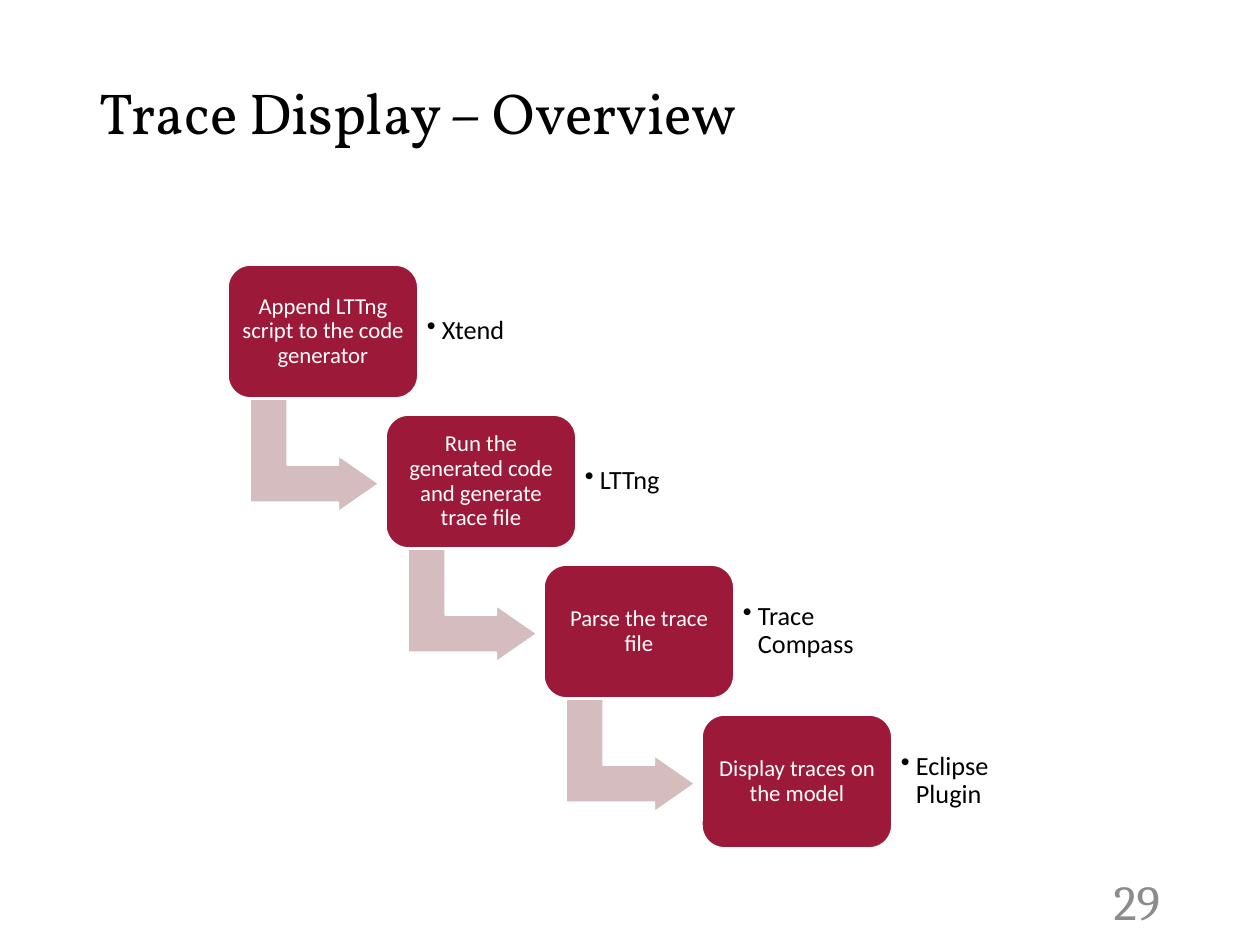
import pptx
import pptx.dml.color
import pptx.enum.shapes
import pptx.enum.text
import pptx.util
from lxml import etree

RGBColor = pptx.dml.color.RGBColor
MSO_SHAPE = pptx.enum.shapes.MSO_SHAPE
PP_ALIGN = pptx.enum.text.PP_ALIGN

CRIMSON = RGBColor(0x9D, 0x19, 0x39)
ROSE = RGBColor(0xD5, 0xBD, 0xBF)
WHITE = RGBColor(0xFF, 0xFF, 0xFF)
BLACK = RGBColor(0x00, 0x00, 0x00)
GRAY = RGBColor(0x8C, 0x8C, 0x8C)

EMU_PER_PX = 914400 / 126

TITLE = {"font": "Vollkorn", "size": 33, "color": BLACK, "align": PP_ALIGN.LEFT, "spacing": 0.9, "inset": (13, 6)}
NUMBER = {"font": "Cambria", "size": 28, "color": GRAY, "align": PP_ALIGN.RIGHT, "spacing": 1.0, "inset": (13, 6)}
STEP = {"font": "Calibri", "size": 13, "color": WHITE, "align": PP_ALIGN.CENTER, "spacing": 0.9, "inset": (6, 6)}
TOOL = {"font": "Calibri", "size": 15, "color": BLACK, "align": PP_ALIGN.LEFT, "spacing": 0.9, "inset": (8, 8),
        "bullet": True}

STEPS = [
    ("Append LTTng script to the code generator", "Xtend"),
    ("Run the generated code and generate trace file", "LTTng"),
    ("Parse the trace file", "Trace Compass"),
    ("Display traces on the model", "Eclipse Plugin"),
]
STEP_RIGHT, STEP_DOWN = 158, 150


def px(*lengths):
    return [pptx.util.Emu(round(length * EMU_PER_PX)) for length in lengths]


def write(shape, text, style):
    """Put one styled paragraph, bulleted if the style says so, into a shape."""
    frame = shape.text_frame
    side, top = px(*style["inset"])
    settings = {"word_wrap": True, "vertical_anchor": pptx.enum.text.MSO_ANCHOR.MIDDLE,
                "margin_left": side, "margin_right": side, "margin_top": top, "margin_bottom": top}
    for name, value in settings.items():
        setattr(frame, name, value)
    paragraph = frame.paragraphs[0]
    paragraph.text = text
    paragraph.alignment = style["align"]
    paragraph.line_spacing = style["spacing"]
    if style.get("bullet"):
        indent = px(15)[0]
        properties = paragraph._p.get_or_add_pPr()
        properties.set("marL", str(indent))
        properties.set("indent", str(-indent))
        bullet = etree.SubElement(properties, pptx.oxml.ns.qn("a:buChar"))
        bullet.set("char", "•")
    font = paragraph.runs[0].font
    font.name = style["font"]
    font.size = pptx.util.Pt(style["size"])
    font.color.rgb = style["color"]


presentation = pptx.Presentation()
presentation.slide_width, presentation.slide_height = px(1260, 945)
slide = presentation.slides.add_slide(presentation.slide_layouts[6])
shapes = slide.shapes

write(shapes.add_textbox(*px(889, 876, 284, 50)), "29", NUMBER)
write(shapes.add_textbox(*px(87, 40, 1086, 151)), "Trace Display – Overview", TITLE)

for index, (step, tool) in enumerate(STEPS):
    right, down = index * STEP_RIGHT, index * STEP_DOWN
    drawn = []
    if index < len(STEPS) - 1:
        arrow = shapes.add_shape(MSO_SHAPE.BENT_UP_ARROW, *px(258 + right, 391 + down, 113, 129))
        arrow.rotation = 90
        for position, value in enumerate((0.33, 0.25, 0.36)):
            arrow.adjustments[position] = value
        drawn.append((arrow, ROSE))

    box = shapes.add_shape(MSO_SHAPE.ROUNDED_RECTANGLE, *px(228 + right, 265 + down, 190, 133))
    box.adjustments[0] = 0.17
    drawn.append((box, CRIMSON))
    for shape, color in drawn:
        shape.shadow.inherit = False
        shape.fill.solid()
        shape.fill.fore_color.rgb = color
        shape.line.color.rgb = WHITE
        shape.line.width = pptx.util.Pt(1)

    write(box, step, STEP)
    write(shapes.add_textbox(*px(419 + right, 277 + down, 139, 108)), tool, TOOL)

presentation.save("out.pptx")
